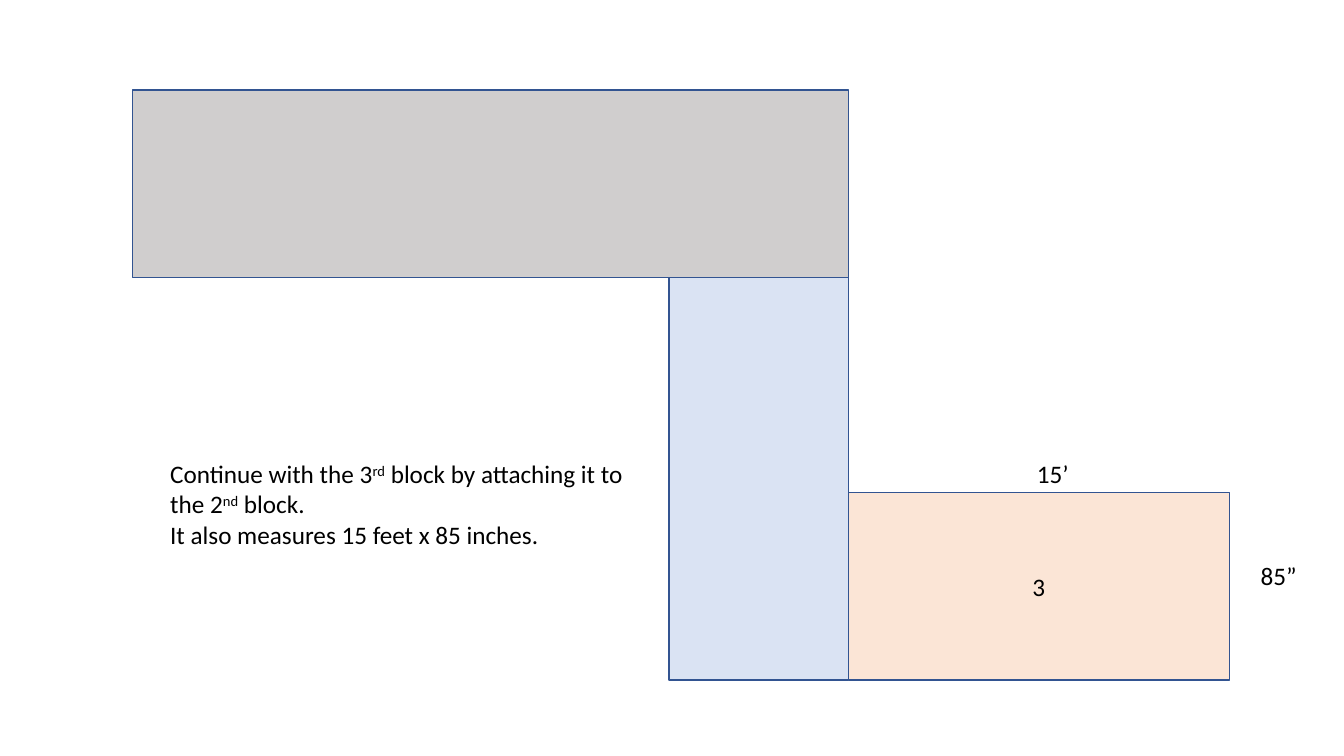
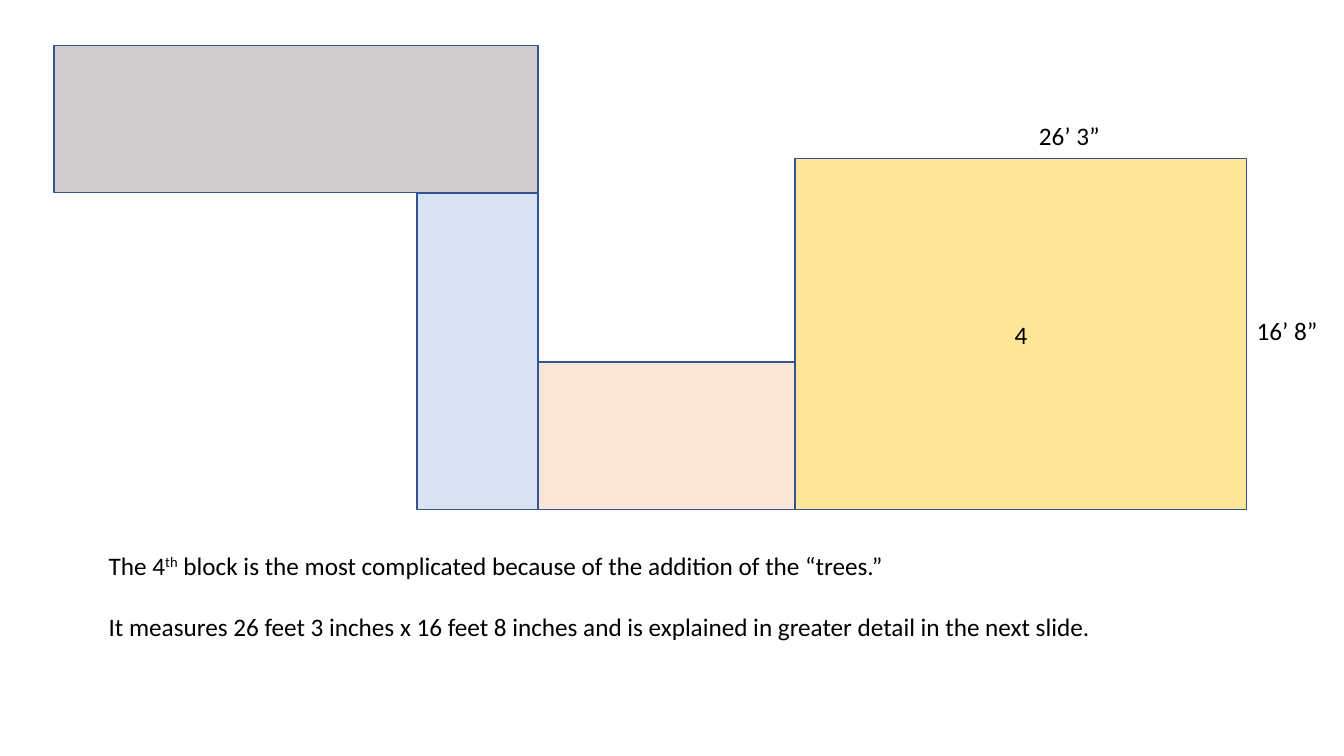
from dataclasses import dataclass

from pptx import Presentation
from pptx import util as u
from pptx.dml.color import RGBColor
from pptx.enum import shapes, text


@dataclass(frozen=True)
class Theme:
    font: str = "Calibri"
    size: int = 18
    ink: str = "000000"
    edge: str = "325491"
    fills: tuple = ("D0CECE", "DAE3F3", "FBE5D6", "FFE699")


THEME = Theme()


def write(frame, lines, align=text.PP_ALIGN.LEFT, gap=0):
    """Fill a text frame; parts between ^ marks are superscript."""
    frame.word_wrap = False
    for i, line in enumerate(lines):
        par = frame.paragraphs[0] if i == 0 else frame.add_paragraph()
        par.alignment = align
        par.space_before = u.Pt(gap if i else 0)
        for j, part in enumerate(line.split("^")):
            run = par.add_run()
            run.text = part
            run.font.name = THEME.font
            run.font.size = u.Pt(THEME.size)
            run.font.color.rgb = RGBColor.from_string(THEME.ink)
            if j % 2:
                run.font._element.set("baseline", "30000")


class Deck:
    def __init__(self):
        self.prs = Presentation()
        self.prs.slide_width = u.Cm(33.87)
        self.prs.slide_height = u.Cm(19.05)
        self.slide = None

    def page(self):
        self.slide = self.prs.slides.add_slide(self.prs.slide_layouts[6])

    def block(self, group, left, top, size, fill, label=""):
        box = group.shapes.add_shape(
            shapes.MSO_SHAPE.RECTANGLE,
            u.Cm(left), u.Cm(top), u.Cm(size[0]), u.Cm(size[1]))
        box.shadow.inherit = False
        box.fill.solid()
        box.fill.fore_color.rgb = RGBColor.from_string(fill)
        box.line.color.rgb = RGBColor.from_string(THEME.edge)
        box.line.width = u.Pt(1)
        if label:
            box.text_frame.vertical_anchor = text.MSO_ANCHOR.MIDDLE
            write(box.text_frame, [label], align=text.PP_ALIGN.CENTER)

    def plan(self, left, top, sizes):
        """Join the blocks: 2 hangs below 1, the rest run right on its base."""
        group = self.slide.shapes.add_group_shape()
        first, second = sizes[:2]
        edge = left + first[0]
        base = top + first[1] + second[1]
        spots = [(left, top), (edge - second[0], top + first[1])]
        for wide, high in sizes[2:]:
            spots.append((edge, base - high))
            edge += wide
        for n, (spot, size) in enumerate(zip(spots, sizes), 1):
            label = str(n) if n == len(sizes) else ""
            self.block(group, *spot, size, THEME.fills[n - 1], label)

    def note(self, left, top, wide, *lines, high=1.02, gap=0):
        box = self.slide.shapes.add_textbox(
            u.Cm(left), u.Cm(top), u.Cm(wide), u.Cm(high))
        box.text_frame.auto_size = text.MSO_AUTO_SIZE.SHAPE_TO_FIT_TEXT
        write(box.text_frame, lines, gap=gap)


def main():
    deck = Deck()

    # Third block
    deck.page()
    deck.plan(3.34, 2.27, [(18.04, 4.73), (4.52, 10.14), (9.6, 4.73)])
    deck.note(4.04, 11.43, 12.27,
              "Continue with the 3^rd^ block by attaching it to",
              "the 2^nd^ block.",
              "It also measures 15 feet x 85 inches.", high=2.57)
    deck.note(25.88, 11.43, 1.32, "15’")
    deck.note(31.52, 14, 1.42, "85”")

    # Fourth block
    deck.page()
    deck.plan(1.36, 1.14, [(12.2, 3.72), (3.05, 7.98), (6.48, 3.72),
                           (11.38, 8.84)])
    deck.note(2.49, 13.74, 25.4,
              "The 4^th^ block is the most complicated because of the "
              "addition of the “trees.”",
              "It measures 26 feet 3 inches x 16 feet 8 inches and is "
              "explained in greater detail in the next slide.",
              high=2.57, gap=22)
    deck.note(25.93, 2.9, 2.06, "26’ 3”")
    deck.note(31.42, 7.82, 2.06, "16’ 8”")

    deck.prs.save("out.pptx")


if __name__ == "__main__":
    main()
